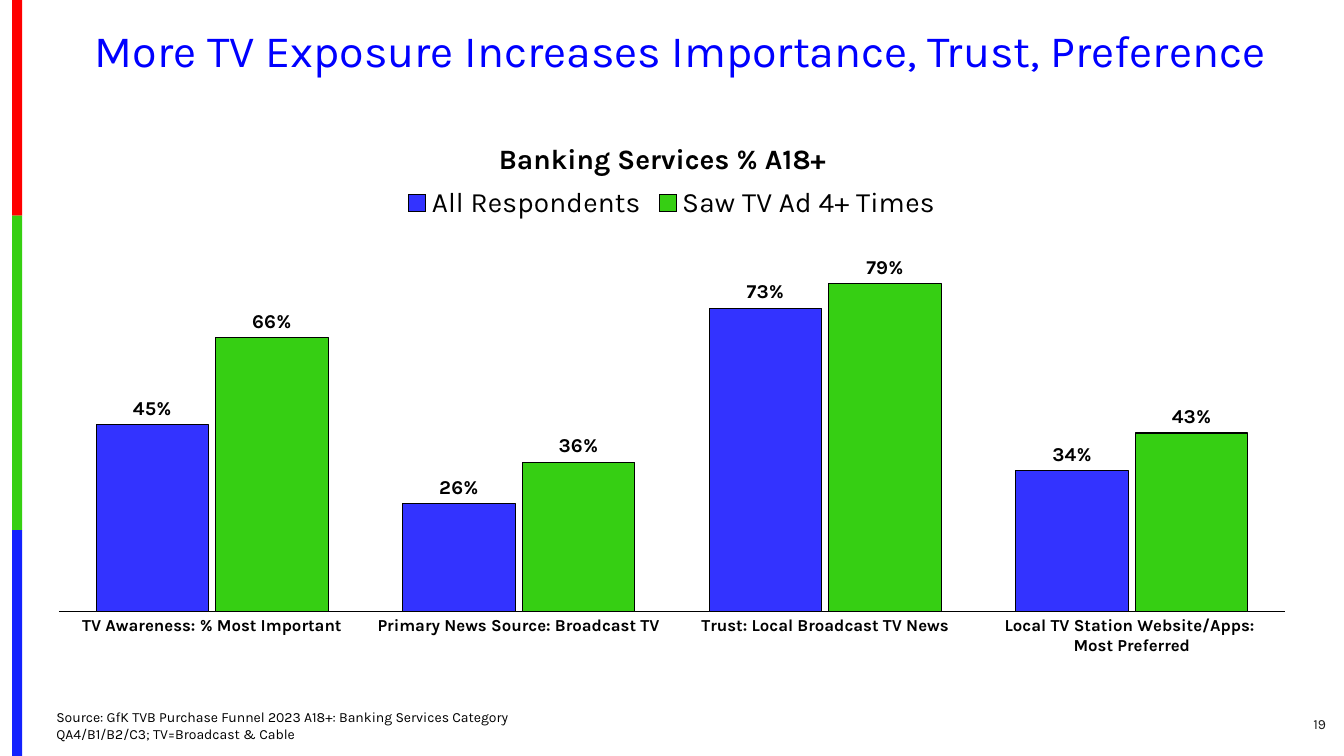
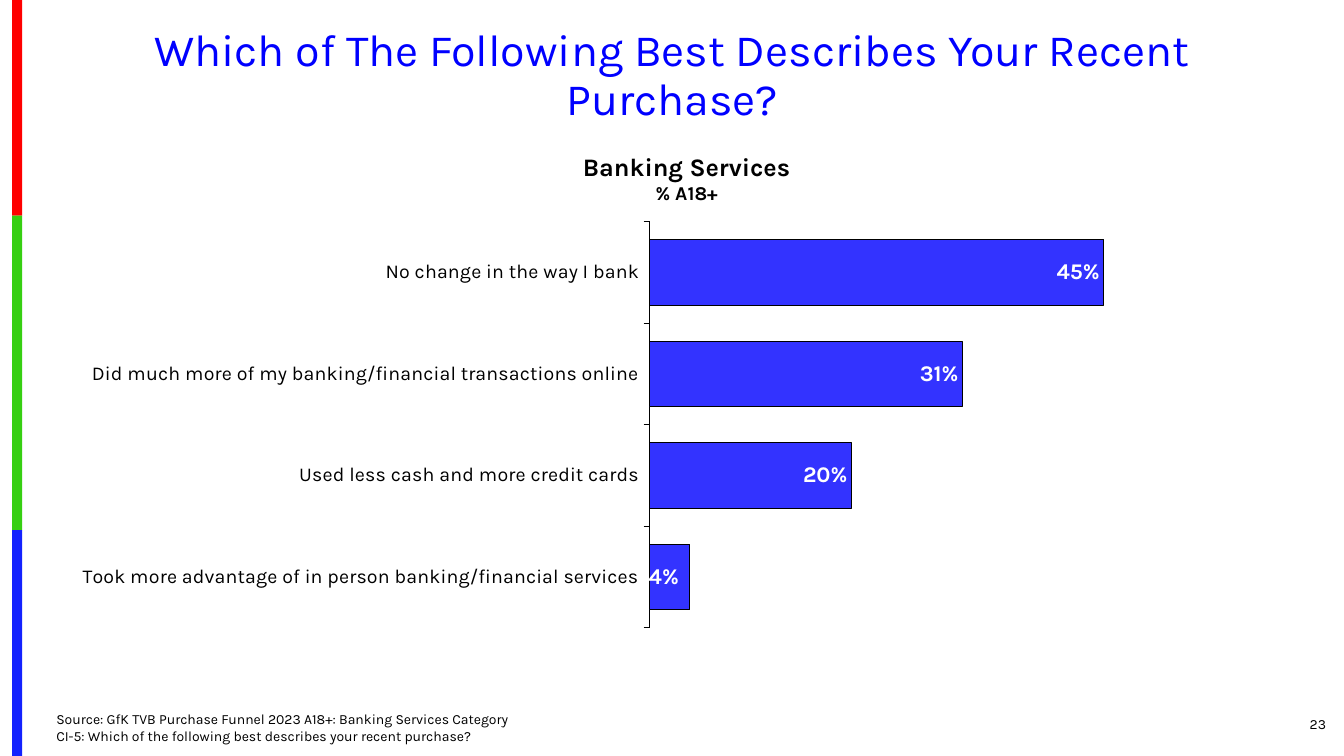
from lxml import etree
from pptx import Presentation
from pptx.chart.data import CategoryChartData
from pptx.dml.color import RGBColor
from pptx.enum.chart import XL_CHART_TYPE, XL_LABEL_POSITION, XL_LEGEND_POSITION, XL_TICK_LABEL_POSITION, XL_TICK_MARK
from pptx.enum.shapes import MSO_SHAPE
from pptx.enum.text import MSO_ANCHOR, PP_ALIGN
from pptx.oxml.ns import qn
from pptx.util import Inches, Pt

FONT = "Karla"
BLACK, WHITE, TITLE_BLUE = "000000", "FFFFFF", "0000FF"
BAR_BLUE, BAR_GREEN = "3333FF", "36CF13"
BANDS = [("FE0000", 2.14), ("36CF12", 3.12), ("1322FE", 2.24)]
BAND_LEFT, BAND_WIDTH = 0.12, 0.1
SOURCE = "Source: GfK TVB Purchase Funnel 2023 A18+: Banking Services Category"

EXPOSURE = {
    "title": "More TV Exposure Increases Importance, Trust, Preference",
    "title_box": (0.42, 0.24, 12.67, 0.71),
    "heading": [("Banking Services % A18+", 20)],
    "heading_box": (4.26, 1.35, 4.62, 0.44),
    "source": [SOURCE, "QA4/B1/B2/C3; TV=Broadcast & Cable"],
    "source_top": 6.98,
    "page": ("19", "1C1C1C"),
    "kind": XL_CHART_TYPE.COLUMN_CLUSTERED,
    "chart_box": (0.33, 1.72, 12.67, 4.89),
    "plot": (0.02, 0.13, 0.96, 0.76),
    "categories": [
        "TV Awareness: % Most Important",
        "Primary News Source: Broadcast TV",
        "Trust: Local Broadcast TV News",
        "Local TV Station Website/Apps: \nMost Preferred",
    ],
    "series": [
        ("All Respondents", BAR_BLUE, (0.45, 0.26, 0.73, 0.34)),
        ("Saw TV Ad 4+ Times", BAR_GREEN, (0.66, 0.36, 0.79, 0.43)),
    ],
    "gap": 66,
    "overlap": -6,
    "maximum": 0.9,
    "tick": XL_TICK_MARK.NONE,
    "axis_text": (12, True),
    "label_text": (14, BLACK, XL_LABEL_POSITION.OUTSIDE_END),
}

PURCHASE = {
    "title": "Which of The Following Best Describes Your Recent Purchase?",
    "title_box": (0.46, 0.23, 12.42, 0.59),
    "heading": [("Banking Services", 18), ("% A18+", 14)],
    "heading_box": (5.63, 1.45, 2.36, 0.64),
    "source": [SOURCE, "CI-5: Which of the following best describes your recent purchase?"],
    "source_top": 7,
    "page": ("23", BLACK),
    "kind": XL_CHART_TYPE.BAR_CLUSTERED,
    "chart_box": (0.73, 2.01, 12, 4.37),
    "plot": (0.476, 0.043, 0.417, 0.923),
    "categories": [
        "No change in the way I bank",
        "Did much more of my banking/financial transactions online",
        "Used less cash and more credit cards",
        "Took more advantage of in person banking/financial services",
    ],
    "series": [("Series 1", BAR_BLUE, (0.45, 0.31, 0.2, 0.04))],
    "gap": 55,
    "overlap": 0,
    "maximum": 0.5,
    "tick": XL_TICK_MARK.OUTSIDE,
    "axis_text": (14, False),
    "label_text": (16, WHITE, XL_LABEL_POSITION.INSIDE_END),
    "nudged_label": (3, -0.006),
}


def color(value):
    return RGBColor.from_string(value)


def style(font, size, value=BLACK, bold=False):
    font.name = FONT
    font.size = Pt(size)
    font.bold = bold
    font.color.rgb = color(value)


def inches(box):
    return [Inches(length) for length in box]


def add_text(slide, box, paragraphs, align=PP_ALIGN.LEFT, value=BLACK, bold=False,
             anchor=MSO_ANCHOR.TOP, spacing=None):
    frame = slide.shapes.add_textbox(*inches(box)).text_frame
    frame.word_wrap = True
    frame.vertical_anchor = anchor
    for index, (lines, size) in enumerate(paragraphs):
        paragraph = frame.add_paragraph() if index else frame.paragraphs[0]
        paragraph.alignment = align
        paragraph.line_spacing = spacing
        for number, line in enumerate(lines):
            if number:
                paragraph.add_line_break()
            run = paragraph.add_run()
            run.text = line
            style(run.font, size, value, bold)


def add_bands(slide, layout):
    top = 0
    for value, height in BANDS:
        band = slide.shapes.add_shape(
            MSO_SHAPE.RECTANGLE, *inches((BAND_LEFT, top, BAND_WIDTH, height)))
        band.shadow.inherit = False
        band.fill.solid()
        band.fill.fore_color.rgb = color(value)
        band.line.fill.background()
        layout.shapes.element.append(band.element)
        top += height


def fill_layout(layout_element, settings):
    for child in list(layout_element):
        layout_element.remove(child)
    manual = etree.SubElement(layout_element, qn("c:manualLayout"))
    for tag, value in settings:
        etree.SubElement(manual, qn(f"c:{tag}")).set("val", str(value))


def place_plot(chart, plot_box):
    plot_area = chart.element.find(".//" + qn("c:plotArea"))
    layout = plot_area.find(qn("c:layout"))
    if layout is None:
        layout = etree.Element(qn("c:layout"))
        plot_area.insert(0, layout)
    modes = [("layoutTarget", "inner"), ("xMode", "edge"), ("yMode", "edge")]
    fill_layout(layout, modes + list(zip("xywh", plot_box)))


def nudge_label(series, index, offset, size, value, position):
    label = series.points[index].data_label
    style(label.font, size, value, True)
    label.position = position
    mark = series.data_labels._element.find(qn("c:dLbl"))
    layout = etree.Element(qn("c:layout"))
    mark.insert(1, layout)
    fill_layout(layout, [("x", offset), ("y", 0)])


def style_series(series, value, content):
    series.format.fill.solid()
    series.format.fill.fore_color.rgb = color(value)
    series.format.line.color.rgb = color(BLACK)
    series.format.line.width = Pt(0.75)
    series.invert_if_negative = False
    size, label_color, position = content["label_text"]
    labels = series.data_labels
    labels.show_value = True
    labels.number_format = "0%"
    labels.number_format_is_linked = False
    labels.position = position
    style(labels.font, size, label_color, True)
    if "nudged_label" in content:
        nudge_label(series, *content["nudged_label"], size, label_color, position)


def add_bar_chart(slide, content):
    data = CategoryChartData(number_format="0%")
    data.categories = content["categories"]
    for name, _, values in content["series"]:
        data.add_series(name, values)
    chart = slide.shapes.add_chart(content["kind"], *inches(content["chart_box"]), data).chart
    style(chart.font, 10)
    chart.has_title = False
    chart.has_legend = len(content["series"]) > 1
    if chart.has_legend:
        chart.legend.position = XL_LEGEND_POSITION.TOP
        chart.legend.include_in_layout = False
        style(chart.legend.font, 20)

    plot = chart.plots[0]
    plot.vary_by_categories = False
    plot.gap_width = content["gap"]
    plot.overlap = content["overlap"]
    for series, (_, value, _) in zip(plot.series, content["series"]):
        style_series(series, value, content)

    answers = chart.category_axis
    answers.major_tick_mark = content["tick"]
    answers.minor_tick_mark = XL_TICK_MARK.NONE
    answers.tick_label_position = XL_TICK_LABEL_POSITION.NEXT_TO_AXIS
    answers.reverse_order = content["kind"] == XL_CHART_TYPE.BAR_CLUSTERED
    answers.format.line.color.rgb = color(BLACK)
    answers.format.line.width = Pt(0.75)
    size, bold = content["axis_text"]
    style(answers.tick_labels.font, size, BLACK, bold)

    shares = chart.value_axis
    shares.minimum_scale = 0
    shares.maximum_scale = content["maximum"]
    shares.has_major_gridlines = False
    shares.visible = False
    place_plot(chart, content["plot"])


def build_slide(slide, content):
    add_bar_chart(slide, content)
    add_text(slide, content["title_box"], [([content["title"]], 32)],
             PP_ALIGN.CENTER, TITLE_BLUE, spacing=0.9)
    add_text(slide, content["heading_box"],
             [([line], size) for line, size in content["heading"]], PP_ALIGN.CENTER, bold=True)
    add_text(slide, (0.46, content["source_top"], 9.45, 0.44), [(content["source"], 10)])
    number, value = content["page"]
    add_text(slide, (12.17, 6.98, 1.08, 0.4), [([number], 10)],
             PP_ALIGN.RIGHT, value, anchor=MSO_ANCHOR.MIDDLE)


def main():
    deck = Presentation()
    deck.slide_width, deck.slide_height = Inches(13.33), Inches(7.5)
    blank = deck.slide_layouts[6]
    slides = [(deck.slides.add_slide(blank), content) for content in (EXPOSURE, PURCHASE)]
    add_bands(slides[0][0], blank)
    for slide, content in slides:
        build_slide(slide, content)
    deck.save("out.pptx")


if __name__ == "__main__":
    main()
